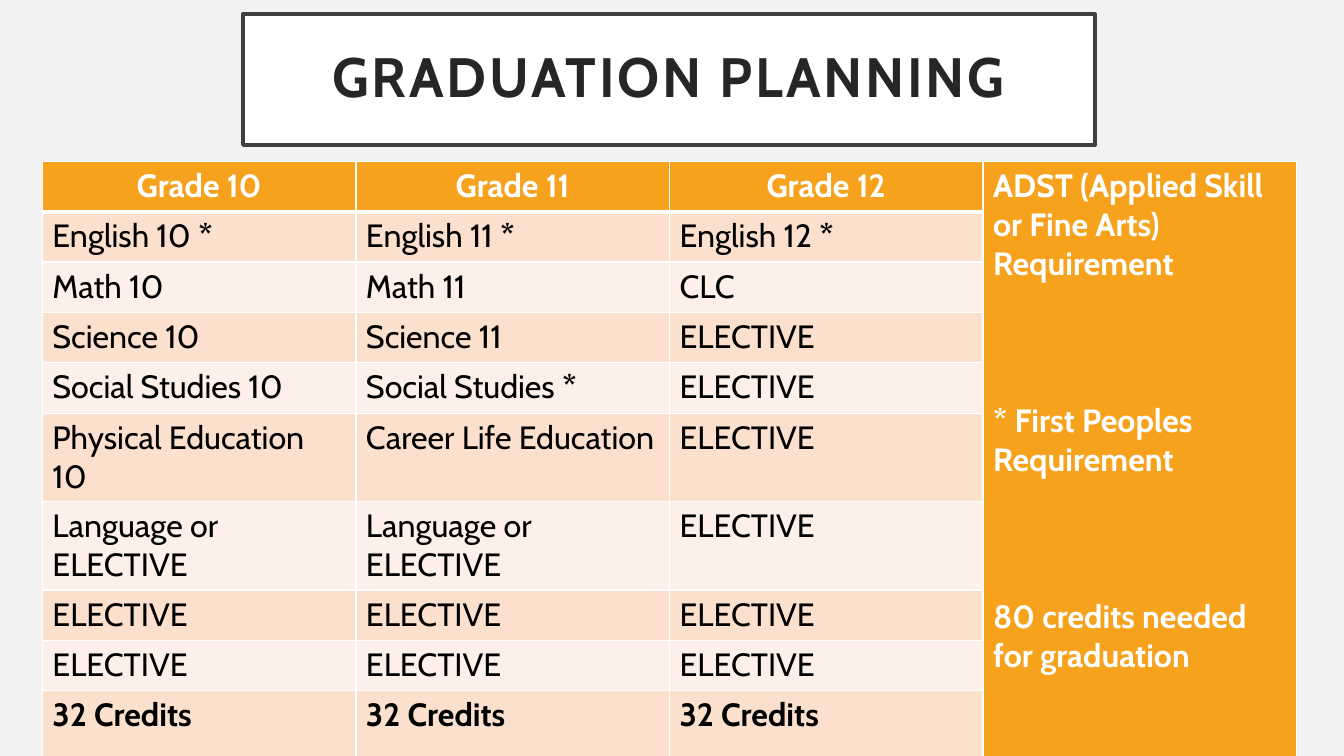
from lxml import etree
from pptx import Presentation
from pptx.dml.color import RGBColor
from pptx.enum.shapes import MSO_SHAPE
from pptx.enum.text import MSO_ANCHOR, PP_ALIGN
from pptx.oxml.ns import qn
from pptx.util import Inches, Pt

RECTANGLE = MSO_SHAPE.RECTANGLE
MIDDLE = MSO_ANCHOR.MIDDLE
CENTER, LEFT = PP_ALIGN.CENTER, PP_ALIGN.LEFT

WHITE = RGBColor(0xFF, 0xFF, 0xFF)
BLACK = RGBColor(0x00, 0x00, 0x00)
PAGE_GREY = RGBColor(0xF2, 0xF2, 0xF2)
FRAME_GREY = RGBColor(0x40, 0x40, 0x40)
TITLE_GREY = RGBColor(0x26, 0x26, 0x26)
ORANGE = RGBColor(0xF6, 0xA2, 0x1D)
BANDS = (RGBColor(0xFD, 0xF0, 0xE8), RGBColor(0xFB, 0xE0, 0xCD))

FONT = "Cabin"
TABLE_SIZE = 23
COLUMN_WIDTH = 3.11
ROW_HEIGHT = 0.5
LAST_ROW_HEIGHT = 0.86
NOTE_GAP = 84

GRADES = ("Grade 10", "Grade 11", "Grade 12")
COURSES = (
    ("English 10 *", "English 11 *", "English 12 *"),
    ("Math 10", "Math 11", "CLC"),
    ("Science 10", "Science 11", "ELECTIVE"),
    ("Social Studies 10", "Social Studies *", "ELECTIVE"),
    ("Physical Education 10", "Career Life Education", "ELECTIVE"),
    ("Language or ELECTIVE", "Language or ELECTIVE", "ELECTIVE"),
    ("ELECTIVE",) * 3,
    ("ELECTIVE",) * 3,
    ("32 Credits",) * 3,
)
NOTES = (
    "ADST (Applied Skill or Fine Arts) Requirement",
    "* First Peoples Requirement",
    "80 credits needed for graduation",
)


def style_span(span, size, color, bold):
    span.font.name = FONT
    span.font.size = Pt(size)
    span.font.color.rgb = color
    span.font.bold = bold


def add_title(page, text):
    box = page.shapes.add_shape(
        RECTANGLE, Inches(2.41), Inches(0.14), Inches(8.45), Inches(1.3))
    box.shadow.inherit = False
    box.fill.solid()
    box.fill.fore_color.rgb = WHITE
    box.line.color.rgb = FRAME_GREY
    box.line.width = Pt(2.5)
    frame = box.text_frame
    frame.word_wrap = True
    frame.vertical_anchor = MIDDLE
    frame.margin_left = frame.margin_right = Inches(0.2)
    frame.margin_top = frame.margin_bottom = Inches(0.2)
    frame.text = text
    para = frame.paragraphs[0]
    para.alignment = CENTER
    para.line_spacing = 0.9
    style_span(para.runs[0], 39.6, TITLE_GREY, True)
    # Letter spacing, in hundredths of a point
    para.runs[0].font._element.set("spc", "200")


def set_borders(cell, bottom_width):
    properties = cell._tc.get_or_add_tcPr()
    widths = (("a:lnL", 1), ("a:lnR", 1), ("a:lnT", 1), ("a:lnB", bottom_width))
    for position, (tag, width) in enumerate(widths):
        line = etree.Element(qn(tag), w=str(Pt(width)))
        fill = etree.SubElement(line, qn("a:solidFill"))
        etree.SubElement(fill, qn("a:srgbClr"), val=str(WHITE))
        properties.insert(position, line)


def paint_cell(cell, color, bottom_width=1):
    cell.fill.solid()
    cell.fill.fore_color.rgb = color
    set_borders(cell, bottom_width)


def write_cell(cell, text, color, bold, alignment=LEFT):
    cell.text_frame.text = text
    for para in cell.text_frame.paragraphs:
        para.alignment = alignment
        for span in para.runs:
            style_span(span, TABLE_SIZE, color, bold)


def write_course(cell, course):
    name, star, _ = course.partition("*")
    write_cell(cell, name, BLACK, course.endswith("Credits"))
    if star:
        span = cell.text_frame.paragraphs[0].add_run()
        span.text = star
        style_span(span, TABLE_SIZE, BLACK, True)


def add_plan(page):
    row_count, column_count = len(COURSES) + 1, len(GRADES) + 1
    height = ROW_HEIGHT * len(COURSES) + LAST_ROW_HEIGHT
    table = page.shapes.add_table(
        row_count, column_count, Inches(0.42), Inches(1.6),
        Inches(COLUMN_WIDTH * column_count), Inches(height)).table
    for column in table.columns:
        column.width = Inches(COLUMN_WIDTH)
    for row in table.rows:
        row.height = Inches(ROW_HEIGHT)
    table.rows[row_count - 1].height = Inches(LAST_ROW_HEIGHT)

    # Grade headings
    for column, grade in enumerate(GRADES):
        cell = table.cell(0, column)
        paint_cell(cell, ORANGE, 3)
        write_cell(cell, grade, WHITE, True, CENTER)

    # Courses in banded rows
    for row, courses in enumerate(COURSES, start=1):
        for column, course in enumerate(courses):
            cell = table.cell(row, column)
            paint_cell(cell, BANDS[row % 2])
            write_course(cell, course)

    # Requirements down the merged last column
    side = table.cell(0, column_count - 1)
    side.merge(table.cell(row_count - 1, column_count - 1))
    paint_cell(side, ORANGE, 3)
    write_cell(side, "\n".join(NOTES), WHITE, True)
    for para in side.text_frame.paragraphs[1:]:
        para.space_before = Pt(NOTE_GAP)


def main():
    deck = Presentation()
    deck.slide_width, deck.slide_height = Inches(13.33), Inches(7.5)
    page = deck.slides.add_slide(deck.slide_layouts[6])
    page.background.fill.solid()
    page.background.fill.fore_color.rgb = PAGE_GREY
    add_title(page, "GRADUATION PLANNING")
    add_plan(page)
    deck.save("out.pptx")


if __name__ == "__main__":
    main()
